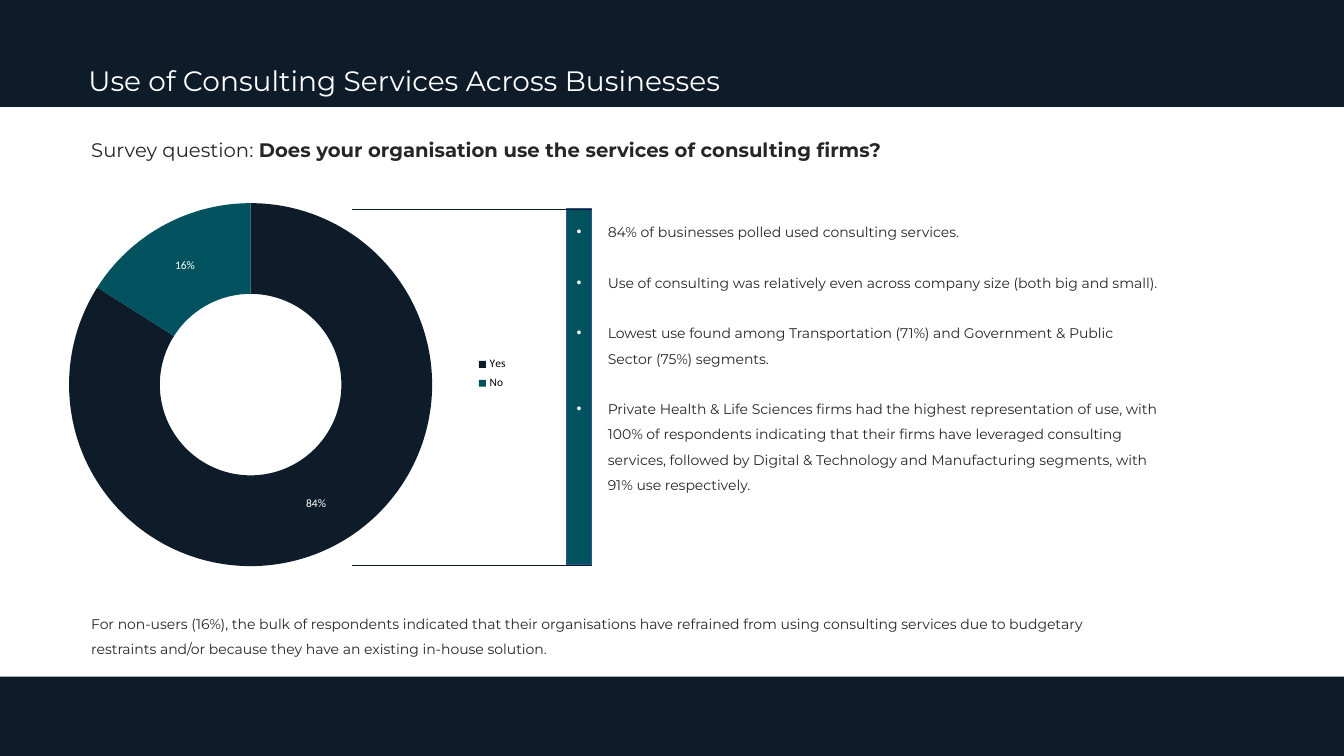
from lxml import etree
from pptx import Presentation
from pptx.chart.data import CategoryChartData as ChartData
from pptx.dml.color import RGBColor as RGB
from pptx.enum.chart import XL_CHART_TYPE as Kind, XL_LEGEND_POSITION as Side
from pptx.enum.shapes import MSO_CONNECTOR as Line, MSO_SHAPE as Shape
from pptx.enum.text import MSO_ANCHOR as Anchor, MSO_AUTO_SIZE as Fit, PP_ALIGN as Align
from pptx.oxml import parse_xml
from pptx.oxml.ns import nsdecls, qn
from pptx.util import Inches, Pt

HUES = {"navy": "0E1C29", "teal": "00535E", "edge": "325491",
        "ink": "262626", "white": "FFFFFF", "black": "000000"}
HUE = {name: RGB.from_string(code) for name, code in HUES.items()}

deck = Presentation()
deck.slide_width, deck.slide_height = Inches(13.33), Inches(7.5)
slide = deck.slides.add_slide(deck.slide_layouts[1])
shapes = slide.shapes
title, body = slide.placeholders


def area(x, y, w, h):
    """Turn percent of the slide's width and height into lengths."""
    wide, high = deck.slide_width / 100, deck.slide_height / 100
    return int(x * wide), int(y * high), int(w * wide), int(h * high)


def write(box, lines, size, hue, space=1.0):
    """Fill a box with left-aligned paragraphs."""
    frame = box.text_frame
    frame.text = "\n".join(lines)
    frame.word_wrap = True
    frame.auto_size = Fit.NONE
    frame.vertical_anchor = Anchor.TOP
    for para in frame.paragraphs:
        para.alignment = Align.LEFT
        para.line_spacing = space
        para.space_before = Pt(0)
        for run in para.runs:
            run.font.name, run.font.size = "Montserrat", Pt(size)
            run.font.color.rgb = HUE[hue]
    return frame


# Header and footer bands
for top, tall in [(89.5, 10.5), (0, 14.15)]:
    band = shapes.add_shape(Shape.RECTANGLE, *area(0, top, 100, tall))
    band.shadow.inherit = False
    band.fill.solid()
    band.fill.fore_color.rgb = HUE["navy"]
    band.line.fill.background()

# Doughnut chart
data = ChartData(number_format="0%")
data.categories = ["Yes", "No"]
data.add_series("Series 1", [0.84, 0.16])
chart = shapes.add_chart(Kind.DOUGHNUT, *area(-1.6, 15.9, 56.64, 68.67), data).chart
chart.has_title = False
chart.font.name, chart.font.size = "Calibri", Pt(8.2)
chart.font.color.rgb = HUE["black"]
chart.has_legend = True
chart.legend.position = Side.RIGHT
chart.legend.include_in_layout = False
plot = chart.plots[0]
plot.vary_by_categories = True
for i, hue in enumerate(["navy", "teal"]):
    fill = plot.series[0].points[i].format.fill
    fill.solid()
    fill.fore_color.rgb = HUE[hue]
plot.has_data_labels = True
labels = plot.data_labels
labels.show_value, labels.show_percentage = True, False
labels.number_format, labels.number_format_is_linked = "0%", False
labels.font.name, labels.font.size = "Calibri", Pt(8.2)
labels.font.color.rgb = HUE["white"]

# Fixed places of the ring and the legend inside the chart
for tag, spot, aim, (x, y, w, h) in [
        ("c:plotArea", 0, '<c:layoutTarget val="inner"/>', (0.119, 0.106, 0.477, 0.807)),
        ("c:legend", 1, "", (0.645, 0.447, 0.06, 0.083))]:
    zone = chart._chartSpace.find(".//" + qn(tag))
    for old in zone.findall(qn("c:layout")):
        zone.remove(old)
    zone.insert(spot, parse_xml(
        f'<c:layout {nsdecls("c")}><c:manualLayout>{aim}'
        f'<c:xMode val="edge"/><c:yMode val="edge"/><c:x val="{x}"/><c:y val="{y}"/>'
        f'<c:w val="{w}"/><c:h val="{h}"/></c:manualLayout></c:layout>'))

# Teal bar behind the bullets
bar = shapes.add_shape(Shape.RECTANGLE, *area(42.13, 27.65, 1.88, 47.07))
bar.shadow.inherit = False
bar.fill.solid()
bar.fill.fore_color.rgb = HUE["teal"]
bar.line.color.rgb, bar.line.width = HUE["edge"], Pt(1)

# Title and list come in front of the bands and the bar
for holder in (title, body):
    holder._element.getparent().append(holder._element)
title.left, title.top, title.width, title.height = area(5.82, 8.27, 72.3, 7.47)
write(title, ["Use of Consulting Services Across Businesses"], 20, "white", 0.9)

# Survey question
ask = shapes.add_textbox(*area(6.05, 17.55, 63.39, 4.53))
para = write(ask, ["Survey question: "], 14, "ink").paragraphs[0]
bold = para.add_run()
bold.text = "Does your organisation use the services of consulting firms?"
bold.font.name, bold.font.size, bold.font.bold = "Montserrat", Pt(14), True
bold.font.color.rgb = HUE["ink"]

# Findings
body.left, body.top, body.width, body.height = area(41.47, 28.43, 44.79, 46.27)
frame = write(body, [
    "84% of businesses polled used consulting services.",
    "Use of consulting was relatively even across company size (both big and small).",
    "Lowest use found among Transportation (71%) and Government & Public Sector (75%) segments.",
    "Private Health & Life Sciences firms had the highest representation of use, with 100% of "
    "respondents indicating that their firms have leveraged consulting services, followed by "
    "Digital & Technology and Manufacturing segments, with 91% use respectively.",
], 10, "ink", 1.5)
frame.margin_left = frame.margin_top = frame.margin_right = frame.margin_bottom = 0
for i, para in enumerate(frame.paragraphs):
    para.space_before = Pt(18.2 if i else 0)
    props = para._p.get_or_add_pPr()
    props.set("marL", str(Inches(0.5)))
    props.set("indent", str(Inches(-0.31)))
    tint = etree.SubElement(props, qn("a:buClr"))
    etree.SubElement(tint, qn("a:srgbClr"), val=HUES["white"])
    etree.SubElement(props, qn("a:buFont"), typeface="Arial")
    etree.SubElement(props, qn("a:buChar"), char="•")

# Note on non-users
note = shapes.add_textbox(*area(6.05, 79.6, 75.32, 7.73))
write(note, ["For non-users (16%), the bulk of respondents indicated that their organisations have "
             "refrained from using consulting services due to budgetary restraints and/or because "
             "they have an existing in-house solution."], 10, "ink", 1.5)

# Lines from the ring to the bar
for row in (27.67, 74.8):
    start, y, end, _ = area(44.04, row, 26.18, 0)
    rule = shapes.add_connector(Line.STRAIGHT, start, y, end, y)
    rule.line.color.rgb, rule.line.width = HUE["navy"], Pt(0.5)
    etree.SubElement(rule._element.spPr, qn("a:effectLst"))

deck.save("out.pptx")
